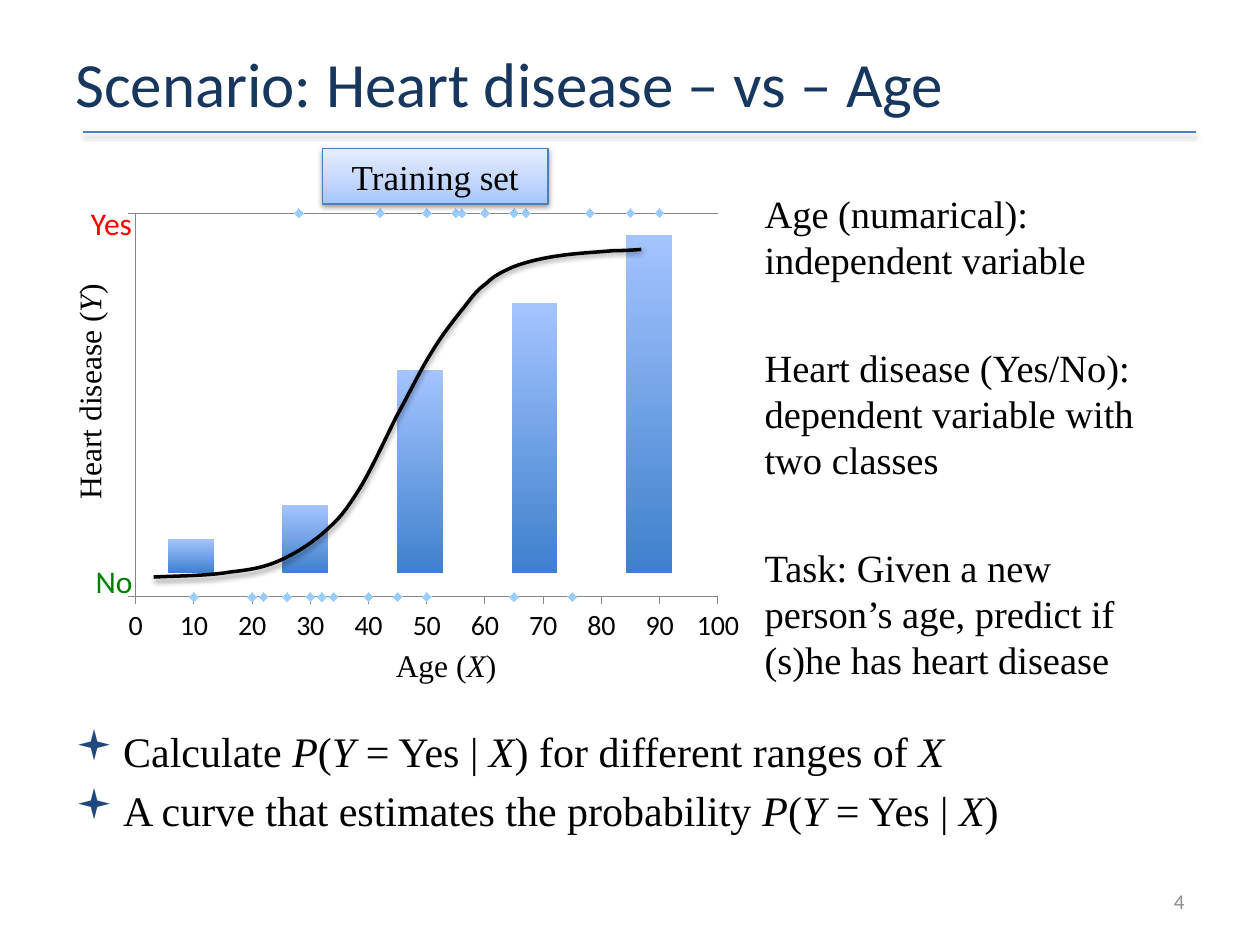
from copy import deepcopy

from lxml import etree
from pptx import Presentation
from pptx.chart.data import CategoryChartData, XyChartData
from pptx.dml.color import RGBColor
from pptx.enum.chart import XL_CHART_TYPE, XL_MARKER_STYLE, XL_TICK_LABEL_POSITION, XL_TICK_MARK
from pptx.enum.shapes import MSO_CONNECTOR, MSO_SHAPE
from pptx.enum.text import MSO_ANCHOR, PP_ALIGN
from pptx.oxml.ns import qn
from pptx.util import Inches, Pt

SCATTER, COLUMNS = XL_CHART_TYPE.XY_SCATTER, XL_CHART_TYPE.COLUMN_CLUSTERED
DIAMOND = XL_MARKER_STYLE.DIAMOND
NO_LABELS = XL_TICK_LABEL_POSITION.NONE
TICK_OUT, TICK_NONE = XL_TICK_MARK.OUTSIDE, XL_TICK_MARK.NONE
STRAIGHT, RECTANGLE = MSO_CONNECTOR.STRAIGHT, MSO_SHAPE.RECTANGLE
TOP, MIDDLE = MSO_ANCHOR.TOP, MSO_ANCHOR.MIDDLE
LEFT, CENTER, RIGHT = PP_ALIGN.LEFT, PP_ALIGN.CENTER, PP_ALIGN.RIGHT

SERIF, SANS = "Times New Roman", "Calibri"
BLACK, AXIS_GRAY = "000000", "868686"
NO, YES = 0, 100
TRAINING_SET = [
    (20, NO), (22, NO), (50, YES), (30, NO), (40, NO), (50, NO), (28, YES), (40, NO),
    (26, NO), (65, YES), (45, NO), (10, NO), (34, NO), (67, YES), (78, YES), (32, NO),
    (56, YES), (42, YES), (65, NO), (75, NO), (55, YES), (60, YES), (90, YES), (85, YES),
]
RANGE_RATES = [10, 20, 60, 80, 100]
# Start point, then three Bézier points for each segment
CURVE_POINTS = [
    (1.22, 4.58), (1.44, 4.57), (1.66, 4.57), (1.83, 4.54), (2.01, 4.52), (2.11, 4.5), (2.24, 4.44),
    (2.37, 4.38), (2.52, 4.28), (2.62, 4.18), (2.72, 4.09), (2.77, 4.01), (2.86, 3.87),
    (2.95, 3.72), (3.06, 3.48), (3.15, 3.3), (3.25, 3.12), (3.34, 2.93), (3.43, 2.79),
    (3.52, 2.64), (3.62, 2.52), (3.69, 2.43), (3.76, 2.34), (3.79, 2.3), (3.86, 2.25),
    (3.92, 2.19), (3.98, 2.16), (4.07, 2.12), (4.17, 2.08), (4.3, 2.05), (4.44, 2.03),
    (4.57, 2.01), (4.76, 2), (4.87, 1.99), (4.98, 1.99), (5.09, 1.98), (5.09, 1.98),
]


def rgb(value):
    return RGBColor.from_string(value)


def inches(box):
    return [Inches(length) for length in box]


def set_line(line, color, width):
    line.color.rgb = rgb(color)
    line.width = Pt(width)


def add_soft_shadow(properties):
    effects = properties.find(qn("a:effectLst"))
    if effects is None:
        effects = etree.SubElement(properties, qn("a:effectLst"))
    shadow = etree.SubElement(effects, qn("a:outerShdw"), blurRad="40000", dist="20000",
                              dir="5400000", rotWithShape="0")
    color = etree.SubElement(shadow, qn("a:srgbClr"), val=BLACK)
    etree.SubElement(color, qn("a:alpha"), val="38000")


def set_gradient(fill, properties, stops):
    """Fill upwards with (position, colour) stops."""
    fill.gradient()
    fill.gradient_angle = 90
    first = properties.xpath(".//a:gs")[0]
    for _ in stops[2:]:
        first.addnext(deepcopy(first))
    for stop, (position, color) in zip(fill.gradient_stops, stops):
        stop.position = position
        stop.color.rgb = rgb(color)


def add_runs(paragraph, text, size, color=BLACK, font=SERIF):
    """Add text in which every second piece between asterisks is italic."""
    for index, piece in enumerate(text.split("*")):
        if piece:
            run = paragraph.add_run()
            run.text = piece
            run.font.size = Pt(size)
            run.font.name = font
            run.font.color.rgb = rgb(color)
            run.font.italic = index % 2 == 1


def add_text(slide, box, text, size, color=BLACK, font=SERIF, align=CENTER, anchor=TOP):
    label = slide.shapes.add_textbox(*inches(box))
    label.text_frame.word_wrap = True
    label.text_frame.vertical_anchor = anchor
    paragraph = label.text_frame.paragraphs[0]
    paragraph.alignment = align
    add_runs(paragraph, text, size, color, font)
    return label


def add_paragraphs(slide, box, texts, size, first_gap, gap):
    frame = slide.shapes.add_textbox(*inches(box)).text_frame
    frame.word_wrap = True
    for index, text in enumerate(texts):
        paragraph = frame.add_paragraph() if index else frame.paragraphs[0]
        paragraph.space_before = Pt(gap if index else first_gap)
        add_runs(paragraph, text, size)
    return frame.paragraphs


def add_header(slide, box):
    left, top, width, height = box
    rule_y = top + height + 0.04
    rule = slide.shapes.add_connector(STRAIGHT, *inches((left + 0.16, rule_y, left + width - 0.01, rule_y)))
    set_line(rule.line, "4F81BD", 1)
    add_soft_shadow(rule._element.spPr)
    add_text(slide, box, "Scenario: Heart disease – vs – Age", 36, "17375E", SANS, LEFT, MIDDLE)


def add_chart(slide, kind, box, data, plot):
    """Add a chart whose inner plot area is given in fractions of the box."""
    chart = slide.shapes.add_chart(kind, *inches(box), data).chart
    chart.has_legend = False
    chart.has_title = False
    chart.font.size = Pt(10)
    chart.font.name = SANS
    chart.font.color.rgb = rgb(BLACK)
    area = chart._chartSpace.chart.plotArea
    for old in area.findall(qn("c:layout")):
        area.remove(old)
    layout = etree.Element(qn("c:layout"))
    area.insert(0, layout)
    manual = etree.SubElement(layout, qn("c:manualLayout"))
    entries = [("layoutTarget", "inner"), ("xMode", "edge"), ("yMode", "edge"), *zip("xywh", plot)]
    for tag, value in entries:
        etree.SubElement(manual, qn(f"c:{tag}"), val=str(value))
    return chart


def add_training_points(slide, box):
    data = XyChartData()
    points = data.add_series("Series 1")
    for age, outcome in TRAINING_SET:
        points.add_data_point(age, outcome)
    chart = add_chart(slide, SCATTER, box, data, (0.031, 0.02, 0.915, 0.856))
    for axis, step in ((chart.category_axis, 10), (chart.value_axis, 100)):
        axis.minimum_scale, axis.maximum_scale, axis.major_unit = 0, 100, step
        axis.major_tick_mark, axis.minor_tick_mark = TICK_OUT, TICK_NONE
        axis.tick_labels.font.size = Pt(16)
        set_line(axis.format.line, AXIS_GRAY, 0.5)
    chart.category_axis.has_major_gridlines = False
    chart.value_axis.has_major_gridlines = True
    set_line(chart.value_axis.major_gridlines.format.line, AXIS_GRAY, 0.5)
    chart.value_axis.tick_label_position = NO_LABELS
    chart.plots[0].vary_by_categories = False
    series = chart.plots[0].series[0]
    series.smooth = False
    series.format.line.fill.background()
    series.marker.style = DIAMOND
    series.marker.size = 5
    series.marker.format.fill.solid()
    series.marker.format.fill.fore_color.rgb = rgb("99CCFF")
    series.marker.format.line.fill.background()


def add_range_columns(slide, box):
    data = CategoryChartData()
    data.categories = ["1", "2", "3", "4", "5"]
    data.add_series("Series 1", RANGE_RATES)
    chart = add_chart(slide, COLUMNS, box, data, (0, 0.078, 0.926, 0.899))
    chart.value_axis.minimum_scale, chart.value_axis.maximum_scale = 0, 120
    chart.value_axis.has_major_gridlines = False
    chart.category_axis.visible = chart.value_axis.visible = False
    plot = chart.plots[0]
    plot.gap_width = 150
    plot.vary_by_categories = False
    series = plot.series[0]
    set_gradient(series.format.fill, series._element, [(0, "3F80CD"), (1, "A4C4FF")])


def add_probability_curve(slide):
    points = [inches(point) for point in CURVE_POINTS]
    builder = slide.shapes.build_freeform(*points[0])
    builder.add_line_segments(points[1:], close=False)
    curve = builder.convert_to_shape()
    segments = curve._element.xpath(".//a:lnTo")
    for start in range(0, len(segments), 3):
        bezier = etree.Element(qn("a:cubicBezTo"))
        segments[start].addprevious(bezier)
        for segment in segments[start:start + 3]:
            bezier.append(segment[0])
            segment.getparent().remove(segment)
    curve.fill.background()
    set_line(curve.line, BLACK, 2)
    curve.shadow.inherit = False
    add_soft_shadow(curve._element.spPr)


def add_training_badge(slide, box):
    badge = slide.shapes.add_shape(RECTANGLE, *inches(box))
    badge.shadow.inherit = False
    set_gradient(badge.fill, badge._element.spPr, [(0, "A4C4FF"), (0.35, "BFD4FF"), (1, "E6EEFF")])
    set_line(badge.line, "4B7EBC", 0.75)
    add_soft_shadow(badge._element.spPr)
    paragraph = badge.text_frame.paragraphs[0]
    paragraph.alignment = CENTER
    add_runs(paragraph, "Training set", 20)


def add_axis_labels(slide):
    add_text(slide, (2.94, 5.08, 1.2, 0.4), "Age (*X*)", 18)
    add_text(slide, (-0.94, 2.9, 3.31, 0.42), "Heart disease (*Y*)", 18).rotation = 270
    add_text(slide, (0.4, 4.41, 1.01, 0.42), "No", 18, "008000", SANS)
    add_text(slide, (0.38, 1.57, 1.01, 0.42), "Yes", 18, "FF0000", SANS)


def add_bullets(slide, box):
    texts = ["Calculate *P*(*Y* = Yes | *X*) for different ranges of *X*",
             "A curve that estimates the probability *P*(*Y* = Yes | *X*)"]
    for paragraph in add_paragraphs(slide, box, texts, 24, 5, 5):
        properties = paragraph._p.get_or_add_pPr()
        properties.set("marL", str(Inches(0.38)))
        properties.set("indent", str(-Inches(0.38)))
        color = etree.SubElement(properties, qn("a:buClr"))
        etree.SubElement(color, qn("a:srgbClr"), val="1F497D")
        etree.SubElement(properties, qn("a:buFont"), typeface="Wingdings", charset="2")
        etree.SubElement(properties, qn("a:buChar"), char="▪")


def main():
    deck = Presentation()
    deck.slide_width, deck.slide_height = Inches(10), Inches(7.5)
    slide = deck.slides.add_slide(deck.slide_layouts[6])
    add_header(slide, (0.5, 0.3, 9, 0.71))
    add_training_points(slide, (0.92, 1.62, 5.05, 3.56))
    add_text(slide, (7.17, 6.95, 2.33, 0.4), "4", 12, "8C8C8C", SANS, RIGHT, MIDDLE)
    add_axis_labels(slide)
    add_bullets(slide, (0.5, 5.71, 9, 1.24))
    add_training_badge(slide, (2.56, 1.18, 1.79, 0.44))
    add_paragraphs(slide, (5.97, 1.46, 3.53, 4.25), [
        "Age (numarical): independent variable",
        "Heart disease (Yes/No): dependent variable with two classes",
        "Task: Given a new person’s age, predict if (s)he has heart disease",
    ], 22, 4.4, 35)
    add_range_columns(slide, (1.06, 1.05, 4.91, 3.58))
    add_probability_curve(slide)
    deck.save("out.pptx")


if __name__ == "__main__":
    main()
